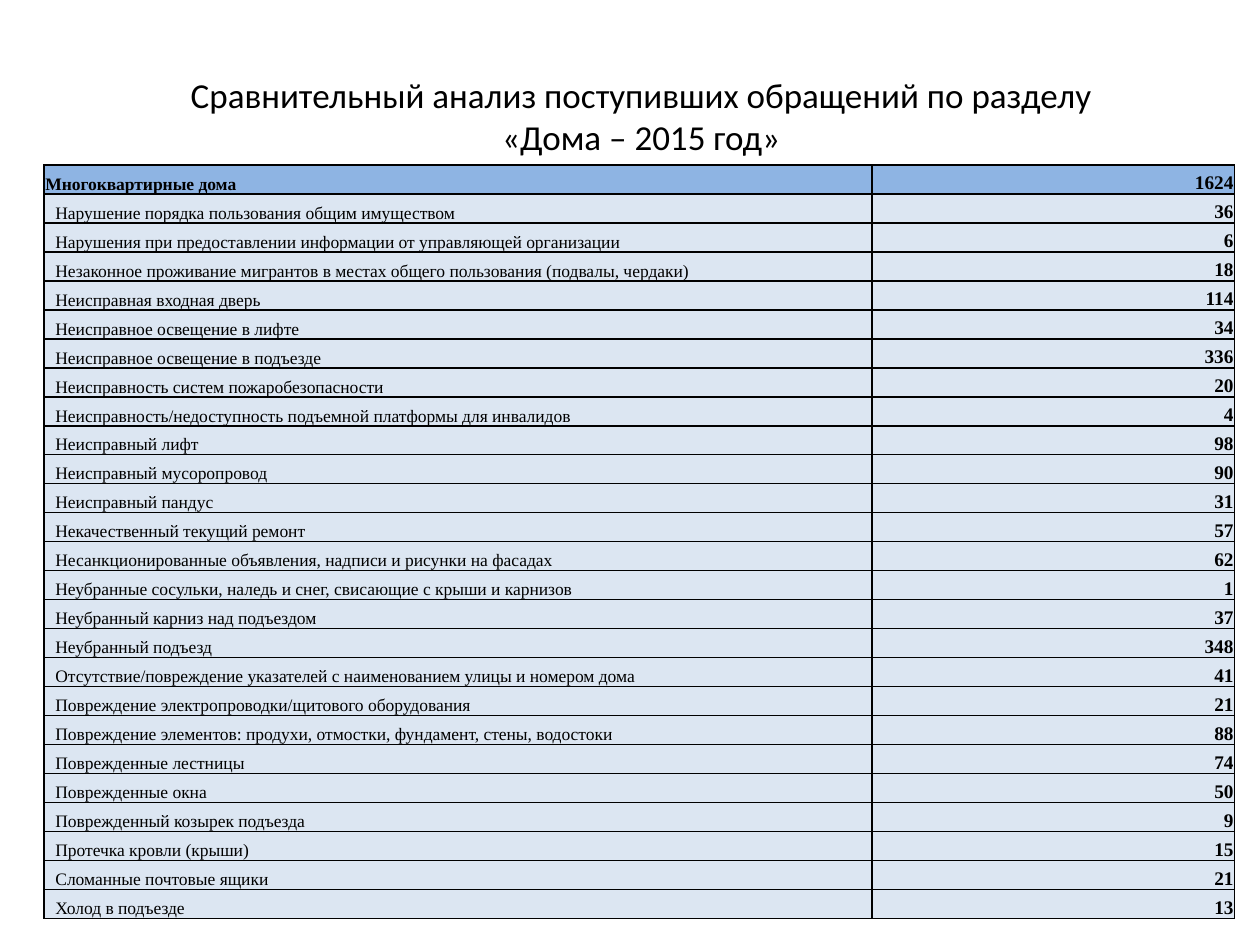
from lxml import etree
from pptx import Presentation
from pptx.dml.color import RGBColor
from pptx.enum.text import MSO_ANCHOR, PP_ALIGN
from pptx.oxml.ns import qn
from pptx.util import Inches, Pt

MIDDLE, BOTTOM = MSO_ANCHOR.MIDDLE, MSO_ANCHOR.BOTTOM
LEFT, CENTER, RIGHT = PP_ALIGN.LEFT, PP_ALIGN.CENTER, PP_ALIGN.RIGHT

COLORS = {"text": "000000", "border": "000000", "header": "8EB4E3", "row": "DCE6F2"}

TITLE = "Сравнительный анализ поступивших обращений по разделу\v«Дома – 2015 год»"
HEADER = ("Многоквартирные дома", 1624)
COMPLAINTS = [
    ("Нарушение порядка пользования общим имуществом", 36),
    ("Нарушения при предоставлении информации от управляющей организации", 6),
    ("Незаконное проживание мигрантов в местах общего пользования (подвалы, чердаки)", 18),
    ("Неисправная входная дверь", 114),
    ("Неисправное освещение в лифте", 34),
    ("Неисправное освещение в подъезде", 336),
    ("Неисправность систем пожаробезопасности", 20),
    ("Неисправность/недоступность подъемной платформы для инвалидов", 4),
    ("Неисправный лифт", 98),
    ("Неисправный мусоропровод", 90),
    ("Неисправный пандус", 31),
    ("Некачественный текущий ремонт", 57),
    ("Несанкционированные объявления, надписи и рисунки на фасадах", 62),
    ("Неубранные сосульки, наледь и снег, свисающие с крыши и карнизов", 1),
    ("Неубранный карниз над подъездом", 37),
    ("Неубранный подъезд", 348),
    ("Отсутствие/повреждение указателей с наименованием улицы и номером дома", 41),
    ("Повреждение электропроводки/щитового оборудования", 21),
    ("Повреждение элементов: продухи, отмостки, фундамент, стены, водостоки", 88),
    ("Поврежденные лестницы", 74),
    ("Поврежденные окна", 50),
    ("Поврежденный козырек подъезда", 9),
    ("Протечка кровли (крыши)", 15),
    ("Сломанные почтовые ящики", 21),
    ("Холод в подъезде", 13),
]
COLUMN_WIDTHS = (6.57, 2.88)
TABLE_HEIGHT = 5.98


def write(para, text, align, **font):
    para.text = text
    para.alignment = align
    for span in para.runs:
        for name, value in font.items():
            setattr(span.font, name, value)
        span.font.color.rgb = RGBColor.from_string(COLORS["text"])


def add_borders(cell):
    properties = cell._tc.get_or_add_tcPr()
    for side in ("lnL", "lnR", "lnT", "lnB"):
        line = etree.SubElement(properties, qn(f"a:{side}"), w=str(Pt(1)))
        fill = etree.SubElement(line, qn("a:solidFill"))
        etree.SubElement(fill, qn("a:srgbClr"), val=COLORS["border"])


def fill_cell(cell, text, align, indent, color, size, bold):
    margins = {"margin_left": indent, "margin_top": 0.01,
               "margin_right": 0.01, "margin_bottom": 0}
    for name, value in margins.items():
        setattr(cell, name, Inches(value))
    cell.vertical_anchor = BOTTOM
    write(cell.text_frame.paragraphs[0], text, align,
          name="Times New Roman", size=Pt(size), bold=bold)
    add_borders(cell)
    cell.fill.solid()
    cell.fill.fore_color.rgb = RGBColor.from_string(color)


def add_title(page):
    box = page.shapes.add_textbox(Inches(0.59), Inches(0.29), Inches(9), Inches(1.25))
    box.text_frame.word_wrap = True
    box.text_frame.vertical_anchor = MIDDLE
    write(box.text_frame.paragraphs[0], TITLE, CENTER, name="Calibri", size=Pt(20))


def add_complaints_table(page):
    records = [HEADER] + COMPLAINTS
    table = page.shapes.add_table(
        len(records), len(COLUMN_WIDTHS), Inches(0.35), Inches(1.31),
        Inches(sum(COLUMN_WIDTHS)), Inches(TABLE_HEIGHT)).table
    table.first_row = table.horz_banding = False
    for column, width in zip(table.columns, COLUMN_WIDTHS):
        column.width = Inches(width)
    for index, (label, count) in enumerate(records):
        is_header = index == 0
        color = COLORS["header" if is_header else "row"]
        table.rows[index].height = Inches(TABLE_HEIGHT / len(records))
        fill_cell(table.cell(index, 0), label, LEFT, 0.01 if is_header else 0.09,
                  color, 10, is_header)
        fill_cell(table.cell(index, 1), str(count), RIGHT, 0.01, color, 11, True)


def main():
    deck = Presentation()
    deck.slide_width, deck.slide_height = Inches(10), Inches(7.5)
    page = deck.slides.add_slide(deck.slide_layouts[6])
    add_title(page)
    add_complaints_table(page)
    deck.save("out.pptx")


if __name__ == "__main__":
    main()
